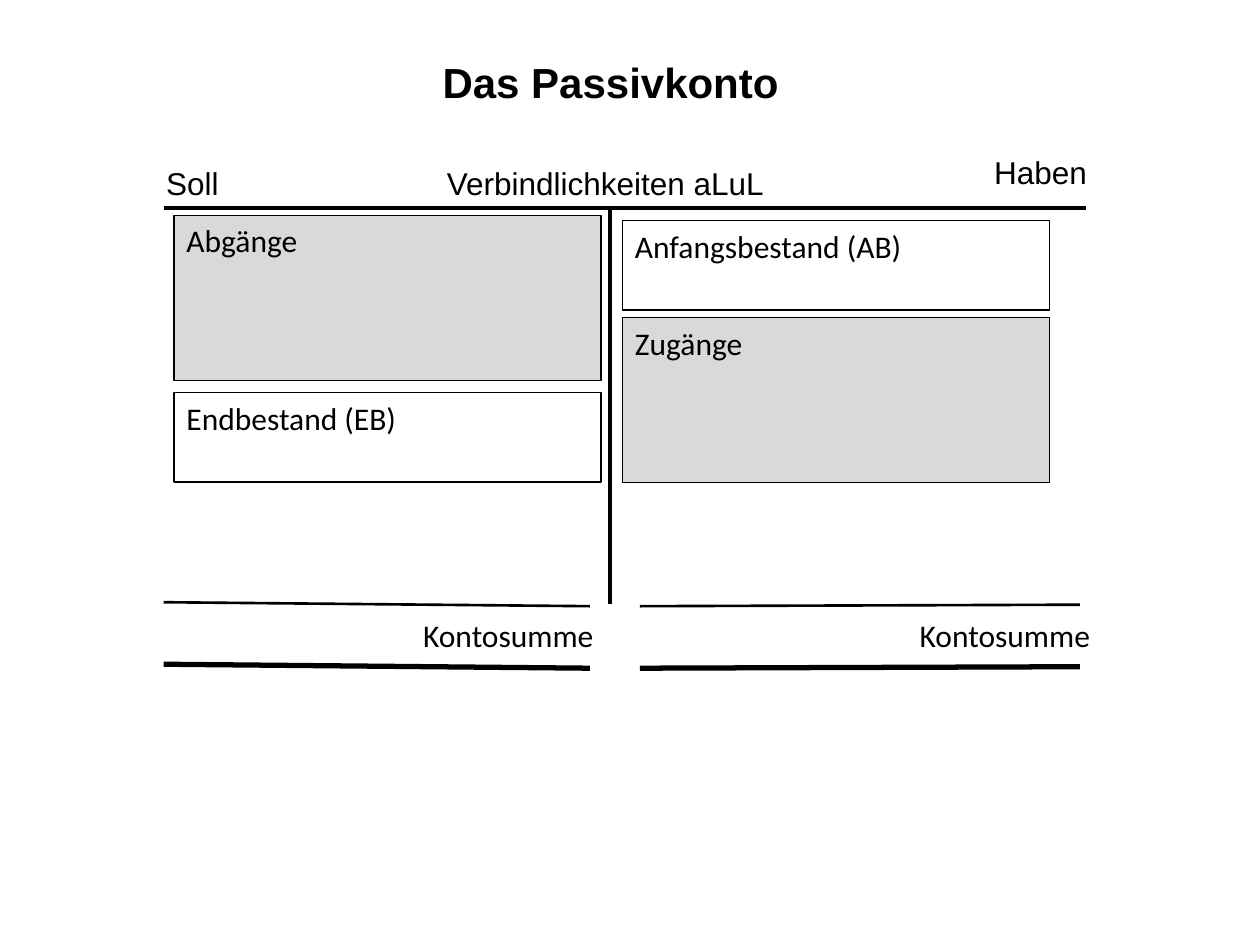
from dataclasses import dataclass

from lxml import etree
from pptx import Presentation
from pptx.dml.color import RGBColor
from pptx.enum.shapes import MSO_CONNECTOR, MSO_SHAPE
from pptx.enum.text import MSO_ANCHOR, PP_ALIGN
from pptx.oxml.ns import qn
from pptx.util import Cm, Pt

STRAIGHT = MSO_CONNECTOR.STRAIGHT
RECT = MSO_SHAPE.RECTANGLE
TOP = MSO_ANCHOR.TOP
LEFT, CENTER = PP_ALIGN.LEFT, PP_ALIGN.CENTER

COLORS = {"black": "000000", "grey": "D9D9D9"}


@dataclass
class Label:
    text: str
    x: float
    y: float
    w: float
    h: float = 1.02
    font: str = "Arial"
    size: int = 18
    bold: bool = False
    align: PP_ALIGN = LEFT


@dataclass
class Entry:
    text: str
    x: float
    y: float
    h: float
    fill: str | None = None


@dataclass
class Rule:
    x1: float
    y1: float
    x2: float
    y2: float
    width: float


def rgb(name: str) -> RGBColor:
    return RGBColor.from_string(COLORS[name])


def write(tf, text: str, font: str, size: int = 18, bold: bool = False,
          align: PP_ALIGN = LEFT) -> None:
    tf.word_wrap = True
    tf.vertical_anchor = TOP
    p = tf.paragraphs[0]
    p.alignment = align
    r = p.add_run()
    r.text = text
    r.font.name = font
    r.font.size = Pt(size)
    r.font.bold = bold
    r.font.color.rgb = rgb("black")


def draw_label(s, label: Label) -> None:
    box = s.shapes.add_textbox(Cm(label.x), Cm(label.y), Cm(label.w), Cm(label.h))
    write(box.text_frame, label.text, label.font, label.size, label.bold, label.align)


def draw_entry(s, entry: Entry) -> None:
    sp = s.shapes.add_shape(RECT, Cm(entry.x), Cm(entry.y), Cm(ENTRY_W), Cm(entry.h))
    sp.shadow.inherit = False
    if entry.fill:
        sp.fill.solid()
        sp.fill.fore_color.rgb = rgb(entry.fill)
    else:
        sp.fill.background()
    sp.line.color.rgb = rgb("black")
    sp.line.width = Pt(0.75)
    write(sp.text_frame, entry.text, "Calibri")


def draw_rule(s, rule: Rule) -> None:
    line = s.shapes.add_connector(STRAIGHT, Cm(rule.x1), Cm(rule.y1),
                                  Cm(rule.x2), Cm(rule.y2))
    line.line.color.rgb = rgb("black")
    line.line.width = Pt(rule.width)
    etree.SubElement(line._element.spPr, qn("a:effectLst"))


# Account columns: debit on the left, credit on the right
DEBIT_X, CREDIT_X, ENTRY_W = 3.51, 12.55, 8.61
BALANCE_H, CHANGE_H = 1.8, 3.33
HEAD_Y, STEM_X = 4.19, 12.29

LABELS = [
    Label("Soll", 3.1, 3.18, 3.81),
    Label("Haben", 19.79, 2.97, 3.81),
    Label("Verbindlichkeiten aLuL", 8.51, 3.18, 7.39, align=CENTER),
    Label("Das Passivkonto", 6.91, 1.02, 10.8, 1.27, size=24, bold=True, align=CENTER),
    *[Label("Kontosumme", x, 12.29, 4.06, font="Calibri") for x in (8.28, 18.29)],
]
ENTRIES = [
    Entry("Anfangsbestand (AB)", CREDIT_X, 4.45, BALANCE_H),
    Entry("Zugänge", CREDIT_X, 6.4, CHANGE_H, "grey"),
    Entry("Abgänge", DEBIT_X, 4.34, CHANGE_H, "grey"),
    Entry("Endbestand (EB)", DEBIT_X, 7.92, BALANCE_H),
]
T_RULES = [
    Rule(STEM_X, HEAD_Y, STEM_X, 12.17, 2.25),
    Rule(3.3, HEAD_Y, 21.89, HEAD_Y, 2.25),
]
# Thin rule above and thick rule below each total
SUM_RULES = [
    rule
    for y, width in ((12.14, 1.5), (13.39, 3))
    for rule in (Rule(3.3, y, 11.89, y + 0.08, width),
                 Rule(12.9, y + 0.08, 21.77, y + 0.05, width))
]


def main() -> None:
    prs = Presentation()
    prs.slide_width, prs.slide_height = Cm(25.4), Cm(19.05)
    s = prs.slides.add_slide(prs.slide_layouts[6])

    # T-account frame, entries, headings and totals
    for rule in T_RULES + SUM_RULES:
        draw_rule(s, rule)
    for entry in ENTRIES:
        draw_entry(s, entry)
    for label in LABELS:
        draw_label(s, label)

    prs.save("out.pptx")


if __name__ == "__main__":
    main()
